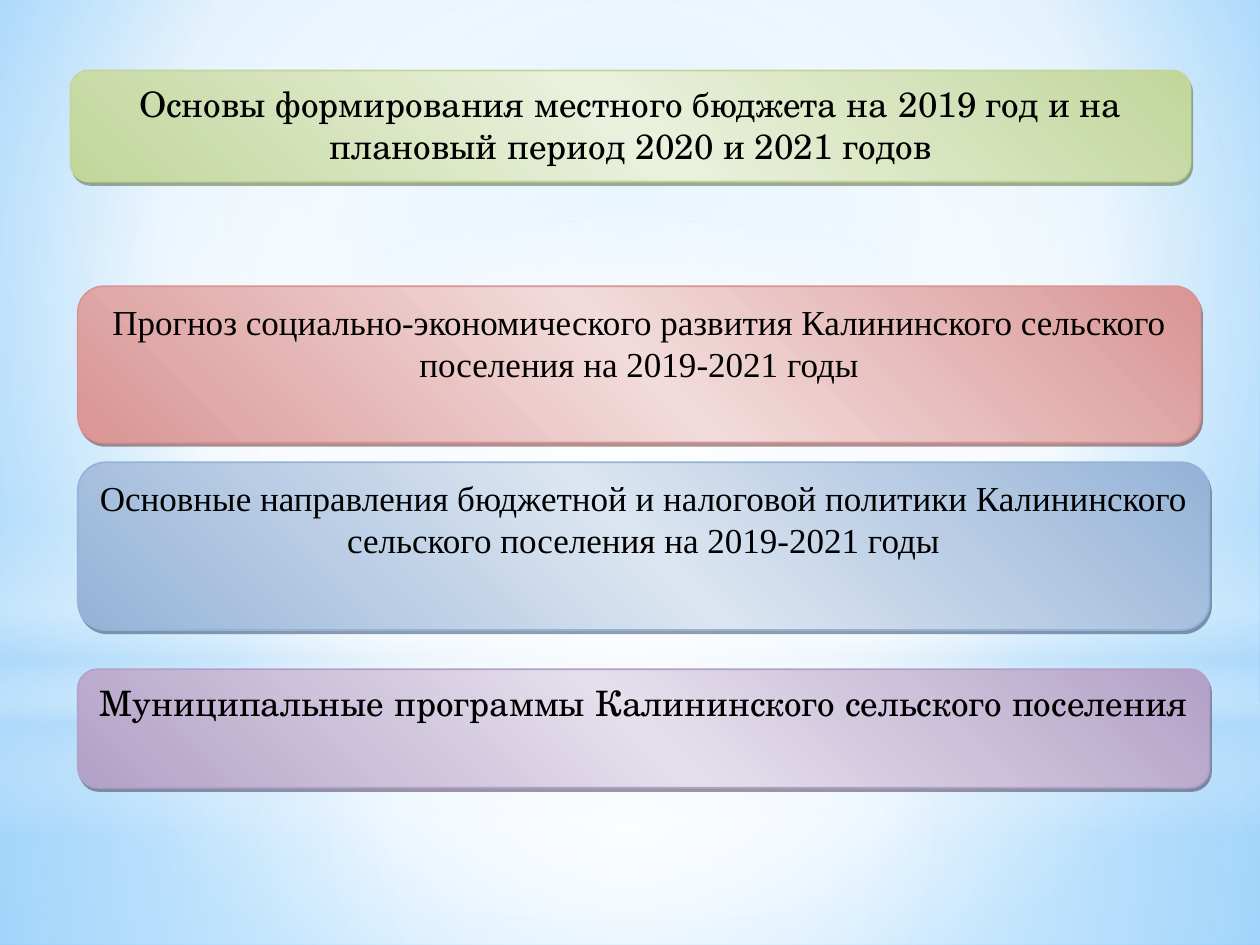
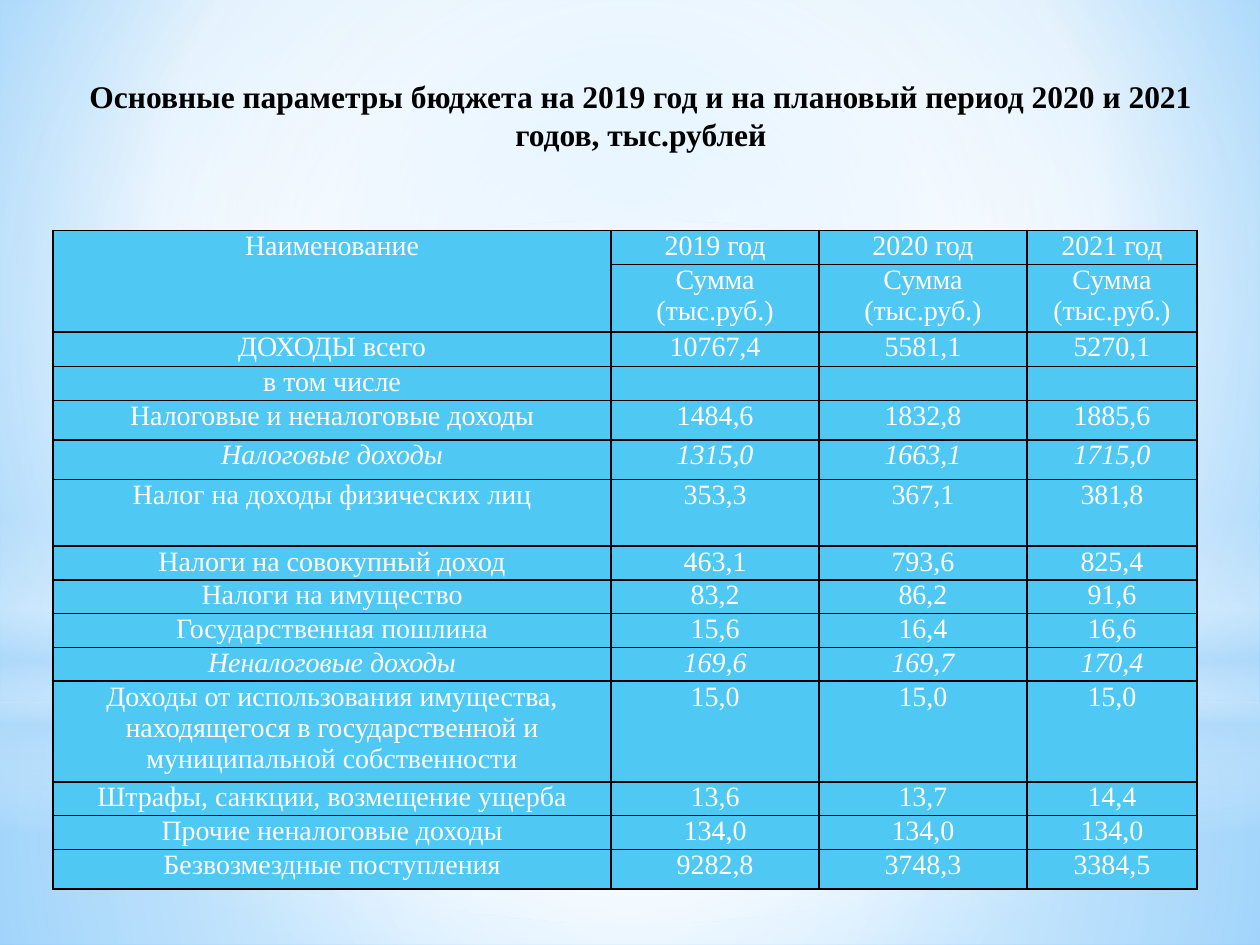
from lxml import etree
from pptx import Presentation
from pptx.dml.color import RGBColor
from pptx.enum.shapes import MSO_SHAPE
from pptx.enum.text import MSO_ANCHOR, PP_ALIGN
from pptx.oxml.ns import qn
from pptx.util import Cm, Pt

RECT, OVAL, ROUND = MSO_SHAPE.RECTANGLE, MSO_SHAPE.OVAL, MSO_SHAPE.ROUNDED_RECTANGLE
TOP, MIDDLE, CENTER = MSO_ANCHOR.TOP, MSO_ANCHOR.MIDDLE, PP_ALIGN.CENTER
SERIF, SCHOOL = "Times New Roman", "TeX Gyre Schola"
BLACK, WHITE, SKY, CELL = "000000", "FFFFFF", "B4DCFA", "4FC8F4"
WIDE, HIGH = 25.4, 19.05
SPLIT = 14.17
MID = (50, 50, 50, 50)

# Gradient stops: position, colour, opacity (all in percent)
BACK = [(0, "9ED5FF", 100), (60, WHITE, 100), (100, "5BB9FF", 100)]
BACK_FOCUS = (20, 10, 20, 60)

# Shared bands: shape, place, stops, focus (None for a vertical blend)
BANDS = [
    (RECT, (0, SPLIT, WIDE, HIGH - SPLIT),
     [(0, WHITE, 91), (37, WHITE, 76), (100, SKY, 79)], MID),
    (RECT, (0, 0, WIDE, SPLIT),
     [(0, WHITE, 89), (48, WHITE, 62), (100, SKY, 79)], MID),
    (RECT, (0, 10.46, WIDE, 6.35),
     [(0, WHITE, 0), (29, WHITE, 30), (45, SKY, 40), (55, WHITE, 26),
      (65, SKY, 60), (100, WHITE, 0)], None),
    (OVAL, (0, 4.45, WIDE, SPLIT), [(0, WHITE, 100), (56, WHITE, 0)], MID),
]

# Boxes: text, font, place, edge colour, middle colour, shadow colour
BOXES = [
    ("Основы формирования местного бюджета на 2019 год и на плановый период 2020 и 2021 годов",
     SCHOOL, (1.42, 1.42, 22.58, 2.24), "C2D69B", "EAF1DD", "4E6128"),
    ("Прогноз социально-экономического развития Калининского сельского поселения на 2019-2021 годы",
     SERIF, (1.57, 5.77, 22.63, 3.15), "D99594", "F2DBDB", "622423"),
    ("Основные направления бюджетной и налоговой политики Калининского сельского поселения "
     "на 2019-2021 годы",
     SERIF, (1.57, 9.32, 22.81, 3.38), "95B3D7", "DBE5F1", "243F60"),
    ("Муниципальные программы Калининского сельского поселения",
     SCHOOL, (1.57, 13.49, 22.81, 2.39), "B2A1C7", "E5DFEC", "3F3151"),
]

TITLE = "Основные параметры бюджета на 2019 год и на плановый период 2020 и 2021 годов, тыс.рублей"
COLS = (11.25, 4.19, 4.19, 3.43)
SUM = "Сумма (тыс.руб.)"
LOW = 0.68
# Rows: height, then the cells
ROWS = [
    (LOW, "Наименование", "2019 год", "2020 год", "2021 год"),
    (1.36, "", SUM, SUM, SUM),
    (0.7, "ДОХОДЫ всего", "10767,4", "5581,1", "5270,1"),
    (LOW, "в том числе", "", "", ""),
    (0.8, "Налоговые и неналоговые доходы", "1484,6", "1832,8", "1885,6"),
    (0.8, "Налоговые доходы", "1315,0", "1663,1", "1715,0"),
    (1.34, "Налог на доходы физических лиц", "353,3", "367,1", "381,8"),
    (LOW, "Налоги на совокупный доход", "463,1", "793,6", "825,4"),
    (LOW, "Налоги на имущество", "83,2", "86,2", "91,6"),
    (LOW, "Государственная пошлина", "15,6", "16,4", "16,6"),
    (LOW, "Неналоговые доходы", "169,6", "169,7", "170,4"),
    (2.03, "Доходы от использования имущества, находящегося в государственной "
     "и муниципальной собственности", "15,0", "15,0", "15,0"),
    (LOW, "Штрафы, санкции, возмещение ущерба", "13,6", "13,7", "14,4"),
    (LOW, "Прочие неналоговые доходы", "134,0", "134,0", "134,0"),
    (0.8, "Безвозмездные поступления", "9282,8", "3748,3", "3384,5"),
]
ITALIC = ("Налоговые доходы", "Неналоговые доходы")


def rgb(code):
    return RGBColor.from_string(code)


def place(box):
    return [Cm(side) for side in box]


def sub(node, tag, **attrs):
    return etree.SubElement(node, qn(tag), {k: str(v) for k, v in attrs.items()})


def tint(node, code, alpha):
    color = sub(node, "a:srgbClr", val=code)
    if alpha < 100:
        sub(color, "a:alpha", val=alpha * 1000)


def blend(fill, node, stops, focus=None, angle=90):
    """Fill with a gradient: round towards focus, or straight at angle."""
    fill.gradient()
    grad = next(node.iter(qn("a:gradFill")))
    for child in list(grad):
        grad.remove(child)
    group = sub(grad, "a:gsLst")
    for pos, code, alpha in stops:
        tint(sub(group, "a:gs", pos=pos * 1000), code, alpha)
    if focus:
        path = sub(grad, "a:path", path="circle")
        sub(path, "a:fillToRect", **{k: v * 1000 for k, v in zip("ltrb", focus)})
    else:
        sub(grad, "a:lin", ang=angle * 60000, scaled=0)


def write(frame, text, size, font=SERIF, color=BLACK, bold=False, italic=False):
    frame.word_wrap = True
    para = frame.paragraphs[0]
    para.text = text
    para.alignment = CENTER
    face = para.font
    face.name, face.size, face.bold, face.italic = font, Pt(size), bold, italic
    face.color.rgb = rgb(color)
    return para


def dress(master, slide):
    """Give the master its background and bands, drawn first on slide."""
    blend(master.background.fill, master.element.cSld, BACK, BACK_FOCUS)
    for num, (kind, box, stops, focus) in enumerate(BANDS, 20):
        band = slide.shapes.add_shape(kind, *place(box))
        band.shadow.inherit = False
        band.line.fill.background()
        blend(band.fill, band.element.spPr, stops, focus)
        band.element.nvSpPr.cNvPr.set("id", str(num))
        master.element.cSld.spTree.append(band.element)


def add_box(slide, text, font, box, edge, core, dark):
    shape = slide.shapes.add_shape(ROUND, *place(box))
    shape.adjustments[0] = 0.167
    stops = [(0, edge, 100), (50, core, 100), (100, edge, 100)]
    blend(shape.fill, shape.element.spPr, stops, angle=315)
    shape.line.color.rgb = rgb(edge)
    shape.line.width = Pt(1)
    shape.shadow.inherit = False
    effects = shape.element.spPr.find(qn("a:effectLst"))
    shade = sub(effects, "a:outerShdw", blurRad=0, dist=Pt(2.2), dir=63 * 60000,
                algn="ctr", rotWithShape=0)
    tint(shade, dark, 50)
    shape.text_frame.vertical_anchor = TOP
    write(shape.text_frame, text, 20, font).space_after = Pt(10)


def rule(props):
    """Draw thin black borders round one table cell."""
    for spot, tag in enumerate(("a:lnL", "a:lnR", "a:lnT", "a:lnB")):
        line = sub(props, tag, w=Pt(1))
        tint(sub(line, "a:solidFill"), BLACK, 100)
        props.insert(spot, line)


def add_grid(slide):
    heights = [row[0] for row in ROWS]
    box = (1.07, 4.65, sum(COLS), sum(heights))
    frame = slide.shapes.add_table(len(ROWS), len(COLS), *place(box))
    table = frame.table
    table.first_row = table.horz_banding = False
    for col, width in zip(table.columns, COLS):
        col.width = Cm(width)
    for num, (height, *texts) in enumerate(ROWS):
        table.rows[num].height = Cm(height)
        side = Cm(0.13 if num < 4 else 0.18)
        for cell, text in zip(table.rows[num].cells, texts):
            cell.margin_left = cell.margin_right = side
            cell.margin_top = cell.margin_bottom = 0
            cell.fill.solid()
            cell.fill.fore_color.rgb = rgb(CELL)
            write(cell.text_frame, text, 16, color=WHITE, italic=texts[0] in ITALIC)
    table.cell(0, 0).merge(table.cell(1, 0))
    for props in frame.element.iter(qn("a:tcPr")):
        rule(props)


def main():
    deck = Presentation()
    deck.slide_width, deck.slide_height = Cm(WIDE), Cm(HIGH)
    basis, budget = [deck.slides.add_slide(deck.slide_layouts[6]) for _ in range(2)]
    dress(deck.slide_master, basis)

    for item in BOXES:
        add_box(basis, *item)

    title = budget.shapes.add_textbox(*place((1.07, 1.42, 23.7, 1.8)))
    title.text_frame.vertical_anchor = MIDDLE
    write(title.text_frame, TITLE, 18, bold=True)
    add_grid(budget)
    deck.save("out.pptx")


if __name__ == "__main__":
    main()
